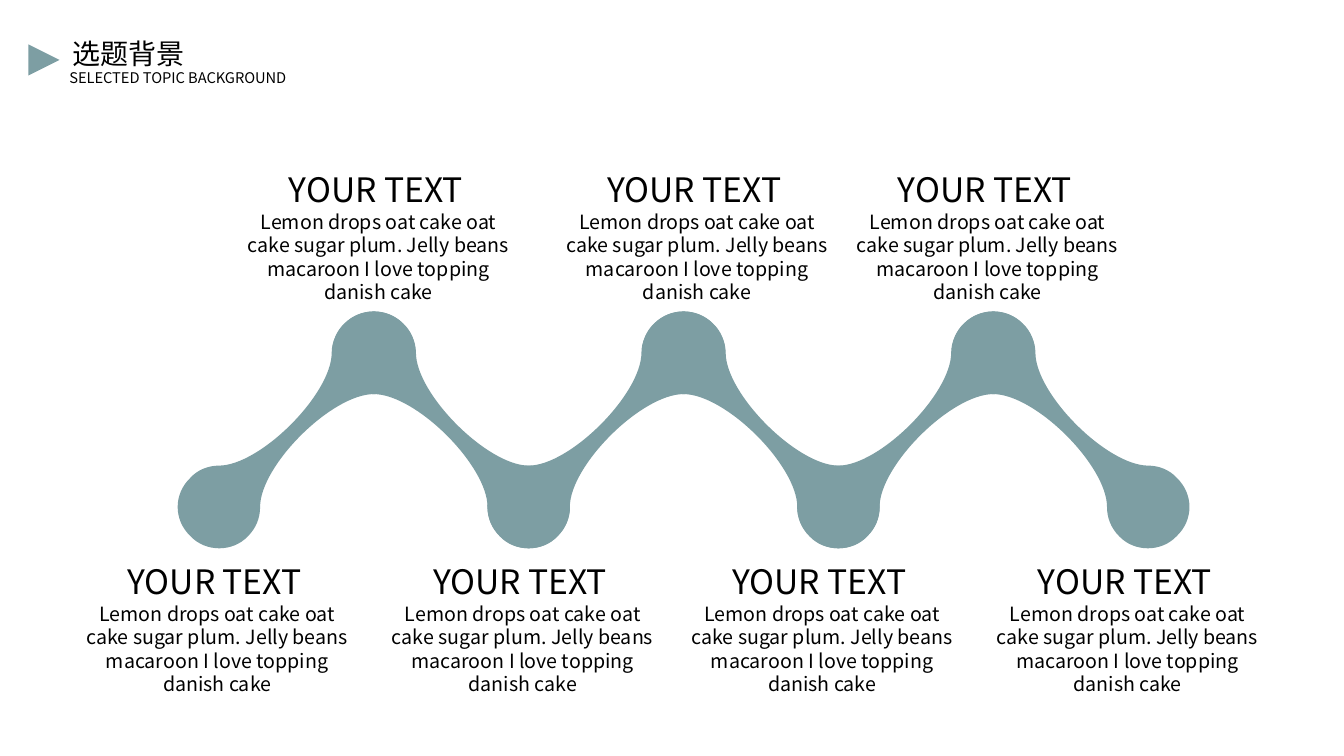
from lxml import etree
from pptx import Presentation, util as u
from pptx.dml.color import RGBColor
from pptx.enum import shapes, text
from pptx.oxml.ns import qn

PX = u.Inches(1) // 100
TEAL = RGBColor(0x7D, 0x9E, 0xA3)
BLACK = RGBColor(0, 0, 0)
FONT = "Noto Sans CJK SC"

CAPTION = "YOUR TEXT"
DETAIL = ("Lemon drops oat cake oat cake sugar plum. "
          "Jelly beans macaroon I love topping danish cake")
# Row top -> left edges of the captions in that row
CAPTION_ROWS = {159: (248, 564, 852), 548: (88, 391, 688, 991)}

CHAIN_LEFT, CHAIN_TOP, LINK_SIZE, LINK_STEP = 172, 305, 244, 153.6
LINK_COUNT = 6
# Rising link: start point, then three points (two handles, one end) per curve
LINK_START = (170, 16)
LINK_CURVES = [
    (162, 24), (157, 34), (157, 45),
    (157, 86), (86, 157), (45, 157),
    (35, 157), (24, 161), (17, 169),
    (0, 185), (0, 211), (17, 227),
    (32, 243), (59, 243), (74, 227),
    (82, 219), (86, 209), (86, 198),
    (86, 157), (157, 86), (199, 86),
    (210, 86), (220, 82), (228, 73),
    (244, 58), (244, 31), (228, 16),
    (212, 0), (186, 0), (170, 16),
]


def set_values(target, values):
    for name, value in values.items():
        setattr(target, name, value)


def paint(shape):
    shape.shadow.inherit = False
    shape.fill.solid()
    shape.fill.fore_color.rgb = TEAL
    shape.line.fill.background()


def add_text(page, words, place, size, leading=1.3, align=text.PP_ALIGN.LEFT,
             **frame_values):
    """Add a one-paragraph text box; leading is line height over font size."""
    box = page.shapes.add_textbox(*(value * PX for value in place))
    set_values(box.text_frame, {"word_wrap": True, **frame_values})
    para = box.text_frame.paragraphs[0]
    set_values(para, {"alignment": align, "line_spacing": u.Pt(size * leading)})
    span = para.add_run()
    span.text = words
    set_values(span.font, {"name": FONT, "size": u.Pt(size)})
    span.font.color.rgb = BLACK
    east_asian = etree.SubElement(span.font._element, qn("a:ea"))
    east_asian.set("typeface", FONT)


def add_header(page):
    marker = page.shapes.add_shape(shapes.MSO_SHAPE.ISOSCELES_TRIANGLE,
                                   28 * PX, 44 * PX, 31 * PX, 31 * PX)
    marker.rotation = 90
    paint(marker)
    add_text(page, "选题背景", (62, 29, 383, 44), 20)
    add_text(page, "SELECTED TOPIC BACKGROUND", (59, 62, 247, 28), 10.5,
             word_wrap=False)


def bend_segments(shape):
    """Turn every three line segments of a freeform into one Bézier curve."""
    segments = list(shape._element.iter(qn("a:lnTo")))
    for first in range(0, len(segments), 3):
        curve = etree.Element(qn("a:cubicBezTo"))
        segments[first].addprevious(curve)
        for segment in segments[first:first + 3]:
            curve.append(segment[0])
            segment.getparent().remove(segment)


def add_link(page, index):
    """Add one link of the chain; odd links fall, so they are mirrored."""
    left = CHAIN_LEFT + index * LINK_STEP

    def locate(point):
        x = LINK_SIZE - point[0] if index % 2 else point[0]
        return round((left + x) * PX), (CHAIN_TOP + point[1]) * PX

    outline = page.shapes.build_freeform(*locate(LINK_START))
    outline.add_line_segments([locate(point) for point in LINK_CURVES])
    link = outline.convert_to_shape()
    bend_segments(link)
    paint(link)


def add_caption(page, left, top):
    add_text(page, CAPTION, (left, top, 228, 50), 24,
             align=text.PP_ALIGN.RIGHT, margin_right=17 * PX)
    add_text(page, DETAIL, (left - 3, top + 49, 261, 98), 14, leading=1.2,
             align=text.PP_ALIGN.CENTER, margin_left=0, margin_top=0,
             margin_right=0, margin_bottom=0)


def main():
    deck = Presentation()
    set_values(deck, {"slide_width": u.Inches(13.33),
                      "slide_height": u.Inches(7.5)})
    page = deck.slides.add_slide(deck.slide_layouts[6])
    add_header(page)
    for index in range(LINK_COUNT):
        add_link(page, index)
    for top, lefts in CAPTION_ROWS.items():
        for left in lefts:
            add_caption(page, left, top)
    deck.save("out.pptx")


if __name__ == "__main__":
    main()
